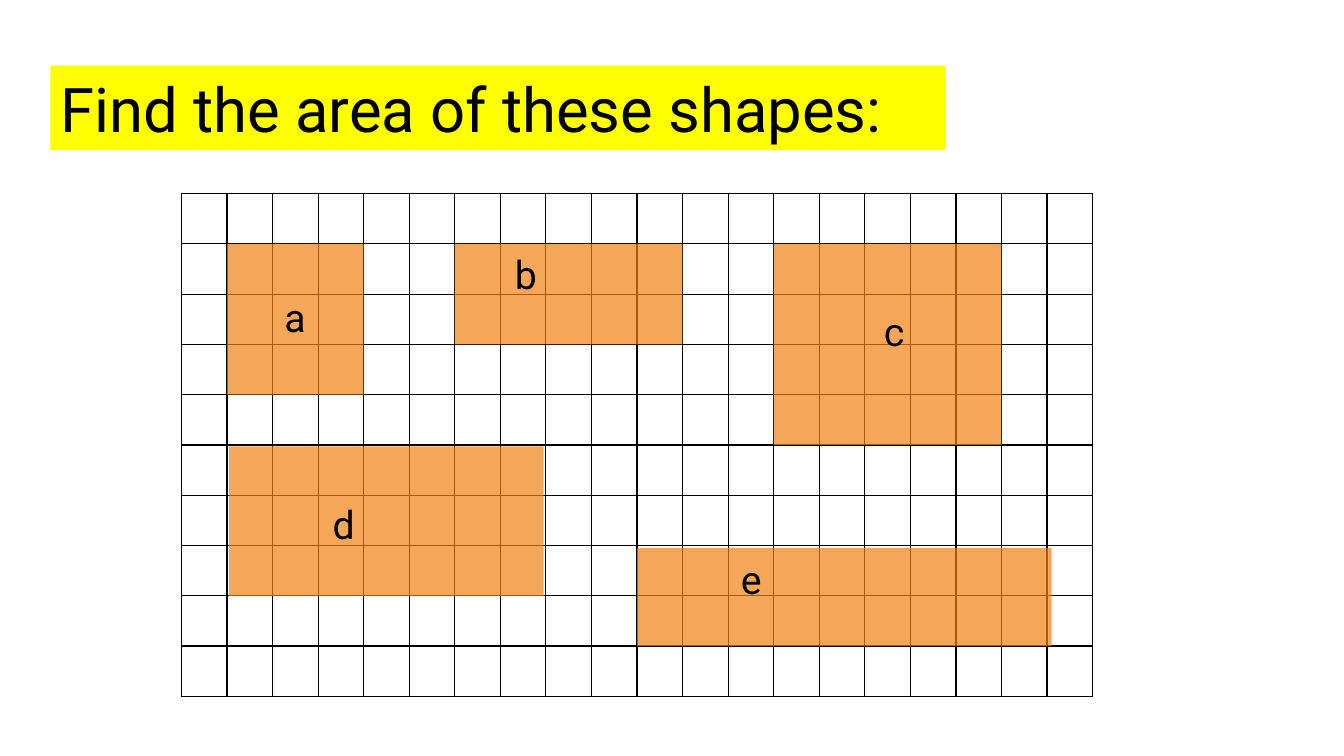
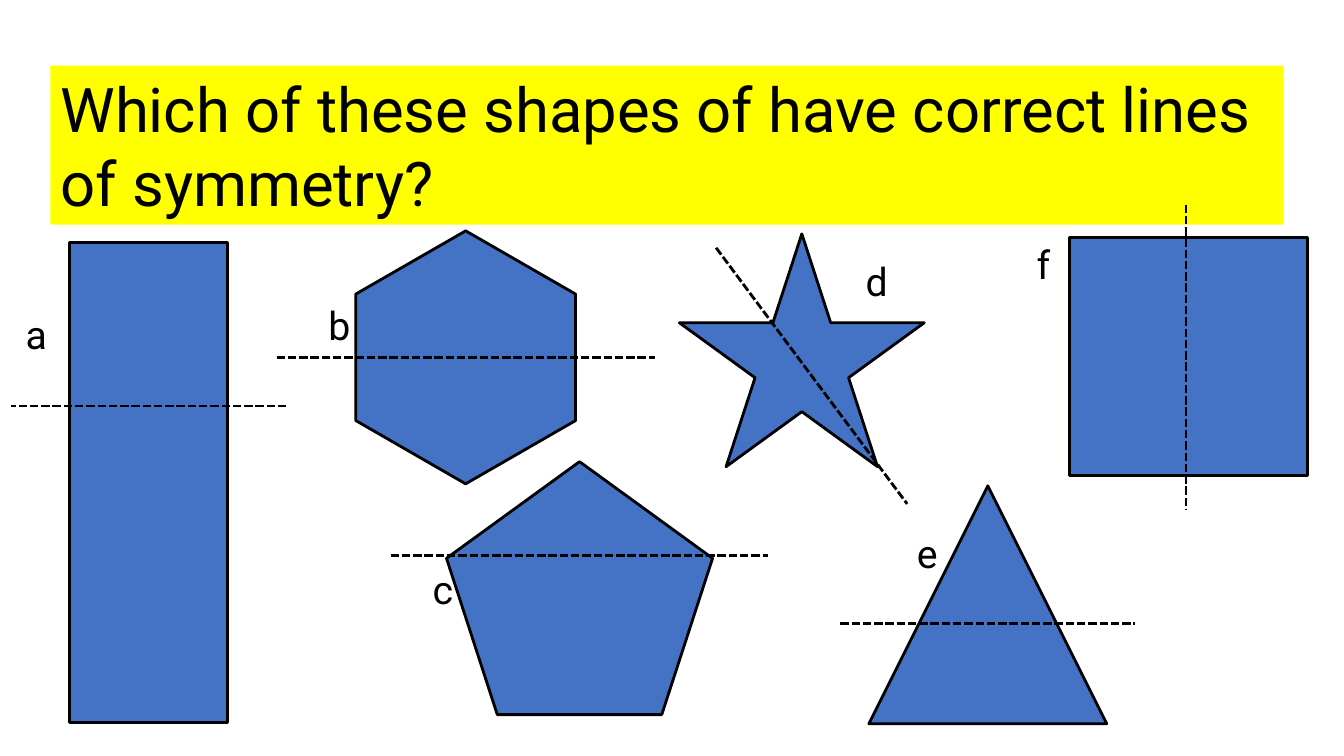
from collections import namedtuple

from lxml.etree import SubElement
from pptx import Presentation
from pptx.dml.color import RGBColor
from pptx.enum.dml import MSO_LINE
from pptx.enum.shapes import MSO_CONNECTOR, MSO_SHAPE as Preset
from pptx.enum.text import MSO_ANCHOR, MSO_AUTO_SIZE, PP_ALIGN
from pptx.oxml import parse_xml
from pptx.oxml.ns import nsdecls, qn
from pptx.util import Inches, Pt

BLACK = RGBColor(0x00, 0x00, 0x00)
WHITE = RGBColor(0xFF, 0xFF, 0xFF)
YELLOW = RGBColor(0xFF, 0xFF, 0x00)
ORANGE = RGBColor(0xF0, 0x82, 0x13)
BLUE = RGBColor(0x44, 0x72, 0xC4)
FONT = "Roboto"
TITLE_SIZE, LABEL_SIZE = Pt(44), Pt(28)
OUTLINE = Pt(2)
TITLE_ONLY = 5


class Grid(namedtuple("Grid", "left top width height columns rows", defaults=(1, 1))):
    """A box divided into columns and rows; a 1 x 1 grid measures in shares."""

    def point(self, column, row):
        return (round(self.left + column * self.width / self.columns),
                round(self.top + row * self.height / self.rows))

    def area(self, column, row, wide, high):
        left, top = self.point(column, row)
        right, bottom = self.point(column + wide, row + high)
        return left, top, right - left, bottom - top


# Three page units make one inch.
PAGE = Grid(0, 0, Inches(40 / 3), Inches(7.5), 40, 22.5)
LABEL_WIDTH, LABEL_HEIGHT = PAGE.point(1.26, 1.71)

COUNTING_BOX = PAGE.area(5.4, 5.76, 27.12, 14.97)
COUNTING_COLUMNS, COUNTING_ROWS = 20, 10

# letter, rectangle in squares, label position in squares
RECTANGLES = [
    ("a", (1, 1, 3, 3), (2.04, 1.88)),
    ("b", (6, 1, 5, 2), (7.1, 1.04)),
    ("c", (13, 1, 5, 4), (15.2, 2.16)),
    ("d", (1.05, 5.03, 6.9, 2.97), (3.1, 6.01)),
    ("e", (10, 7.05, 9.1, 1.95), (12.06, 7.09)),
]

HEXAGON = [(0.5, 0), (1, 0.25), (1, 0.75), (0.5, 1), (0, 0.75), (0, 0.25)]

# letter, outline, box in page units, then axis ends and label in shares of the box
FIGURES = [
    ("c", Preset.REGULAR_PENTAGON, (13.29, 13.74, 7.92, 7.53),
     (-0.21, 0.37), (1.21, 0.37), (-0.09, 0.39)),
    ("a", Preset.RECTANGLE, (2.07, 7.23, 4.71, 14.28),
     (1.37, 0.34), (-0.37, 0.34), (-0.34, 0.13)),
    ("b", HEXAGON, (10.59, 6.87, 6.54, 7.53),
     (-0.36, 0.5), (1.36, 0.5), (-0.17, 0.26)),
    ("e", Preset.ISOSCELES_TRIANGLE, (25.86, 14.46, 7.08, 7.08),
     (-0.12, 0.58), (1.12, 0.58), (0.16, 0.16)),
    ("d", Preset.STAR_5_POINT, (20.22, 6.96, 7.29, 6.93),
     (0.15, 0.06), (0.93, 1.16), (0.72, 0.08)),
    ("f", Preset.RECTANGLE, (31.83, 7.08, 7.08, 7.08),
     (0.49, -0.14), (0.49, 1.14), (-0.18, -0.01)),
]


def write(shape, text, size):
    frame = shape.text_frame
    frame.text = text
    frame.auto_size = MSO_AUTO_SIZE.NONE
    frame.vertical_anchor = MSO_ANCHOR.TOP
    para = frame.paragraphs[0]
    para.alignment = PP_ALIGN.LEFT
    font = para.runs[0].font
    font.name, font.size, font.color.rgb = FONT, size, BLACK
    return frame


def paint(shape, colour):
    shape.shadow.inherit = False
    shape.fill.solid()
    shape.fill.fore_color.rgb = colour


def add_page(deck, title, area):
    page = deck.slides.add_slide(deck.slide_layouts[TITLE_ONLY])
    heading = page.shapes.title
    heading.left, heading.top, heading.width, heading.height = area
    heading.fill.solid()
    heading.fill.fore_color.rgb = YELLOW
    write(heading, title, TITLE_SIZE).word_wrap = True
    return page


def add_label(page, letter, point):
    label = page.shapes.add_textbox(*point, LABEL_WIDTH, LABEL_HEIGHT)
    write(label, letter, LABEL_SIZE).word_wrap = False


def add_border(cell):
    properties = cell._tc.get_or_add_tcPr()
    for index, side in enumerate(("lnL", "lnR", "lnT", "lnB")):
        properties.insert(index, parse_xml(
            f'<a:{side} {nsdecls("a")} w="{Pt(1)}"><a:solidFill>'
            f'<a:srgbClr val="{BLACK}"/></a:solidFill></a:{side}>'))


def add_counting_grid(page, box):
    table = page.shapes.add_table(COUNTING_ROWS, COUNTING_COLUMNS, *box).table
    table.first_row = table.horz_banding = False
    for column in table.columns:
        column.width = round(box[2] / COUNTING_COLUMNS)
    for row in table.rows:
        row.height = round(box[3] / COUNTING_ROWS)
    for cell in table.iter_cells():
        cell.fill.solid()
        cell.fill.fore_color.rgb = WHITE
        add_border(cell)
    return Grid(*box, COUNTING_COLUMNS, COUNTING_ROWS)


def add_see_through_rectangle(page, area):
    shape = page.shapes.add_shape(Preset.RECTANGLE, *area)
    paint(shape, ORANGE)
    shape.line.fill.background()
    colour = shape._element.spPr.find(qn("a:solidFill"))[0]
    SubElement(colour, qn("a:alpha"), val="70000")


def add_outline(page, outline, box):
    """Draw a preset, or a polygon whose corners are shares of the box."""
    if isinstance(outline, list):
        corners = [box.point(*corner) for corner in outline]
        builder = page.shapes.build_freeform(*corners[0])
        builder.add_line_segments(corners[1:], close=True)
        shape = builder.convert_to_shape()
    else:
        shape = page.shapes.add_shape(outline, *box.area(0, 0, 1, 1))
    paint(shape, BLUE)
    shape.line.color.rgb = BLACK
    shape.line.width = OUTLINE


def add_axis(page, start, end):
    axis = page.shapes.add_connector(MSO_CONNECTOR.STRAIGHT, *start, *end)
    axis.line.color.rgb = BLACK
    axis.line.width = OUTLINE
    axis.line.dash_style = MSO_LINE.SQUARE_DOT
    SubElement(axis._element.spPr, qn("a:effectLst"))


def add_area_page(deck):
    page = add_page(deck, "Find the area of these shapes:",
                    PAGE.area(1.5, 1.95, 26.64, 2.52))
    grid = add_counting_grid(page, COUNTING_BOX)
    for _, squares, _ in RECTANGLES:
        add_see_through_rectangle(page, grid.area(*squares))
    for letter, _, spot in RECTANGLES:
        add_label(page, letter, grid.point(*spot))


def add_symmetry_page(deck):
    page = add_page(deck, "Which of these shapes of have correct lines of symmetry?",
                    PAGE.area(1.5, 1.95, 36.69, 4.74))
    for letter, outline, place, start, end, spot in FIGURES:
        box = Grid(*PAGE.area(*place))
        add_outline(page, outline, box)
        add_axis(page, box.point(*start), box.point(*end))
        add_label(page, letter, box.point(*spot))


def main():
    deck = Presentation()
    deck.slide_width, deck.slide_height = PAGE.width, PAGE.height
    add_area_page(deck)
    add_symmetry_page(deck)
    deck.save("out.pptx")


if __name__ == "__main__":
    main()
